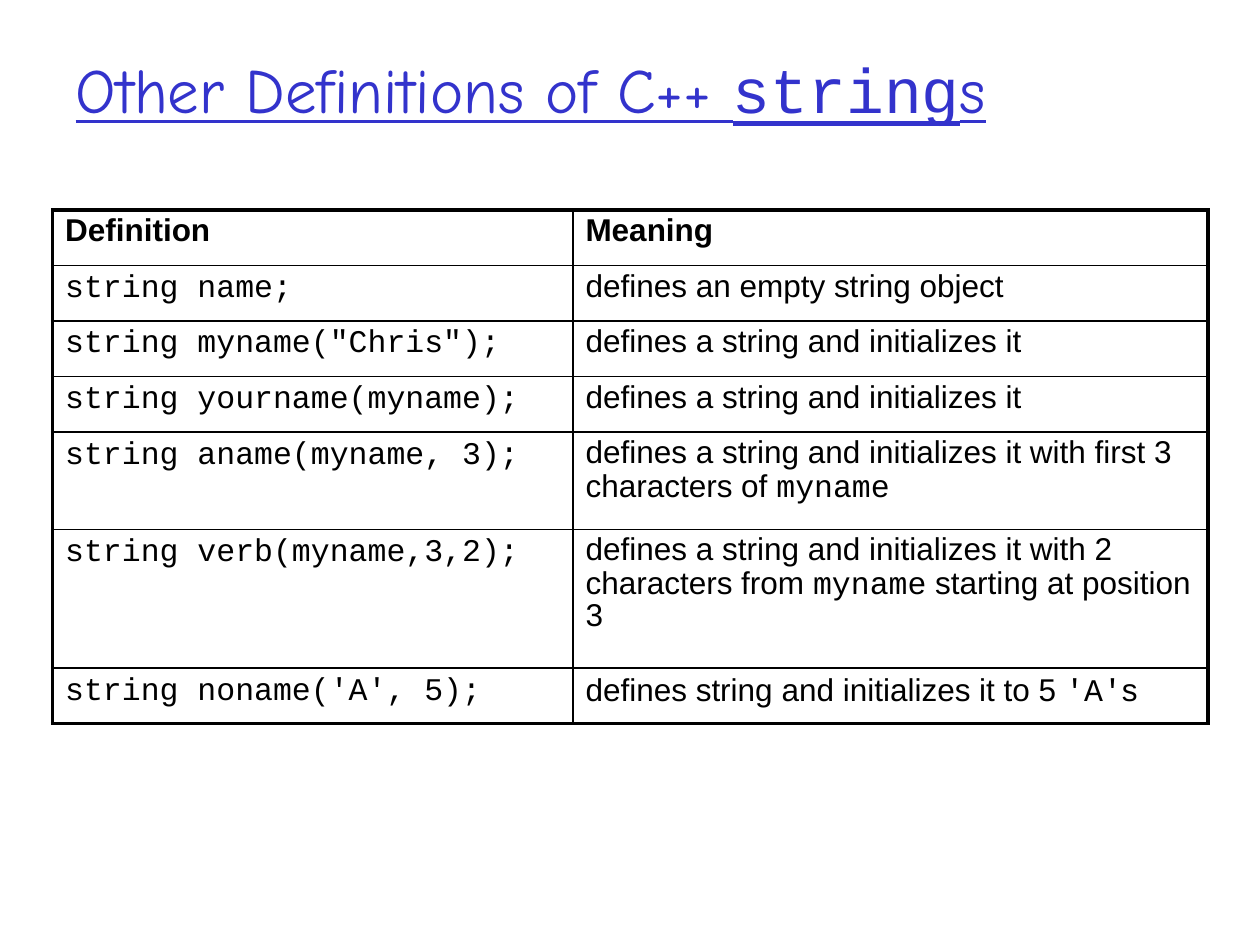
from lxml import etree
from pptx import Presentation
from pptx.dml.color import RGBColor
from pptx.enum.text import MSO_ANCHOR, PP_ALIGN
from pptx.oxml.ns import qn
from pptx.util import Cm, Pt

MIDDLE, LEFT = MSO_ANCHOR.MIDDLE, PP_ALIGN.LEFT


class Theme:
    title_color = RGBColor(0x33, 0x33, 0xCC)
    text_color = RGBColor(0, 0, 0)
    border_color = "000000"
    title_font, body_font, code_font = "Comic Neue", "Arial", "Courier New"
    title_size, body_size = Pt(36), Pt(18)
    thin, thick = Pt(1), Pt(2.25)


def add_runs(p, text, font):
    """Write text into a paragraph; parts between backticks are code."""
    for i, part in enumerate(text.split("`")):
        if part:
            r = p.add_run()
            r.text = part
            r.font.name = Theme.code_font if i % 2 else font


def set_border(cell, side, width):
    ln = etree.SubElement(cell._tc.get_or_add_tcPr(), qn(f"a:ln{side}"), w=str(width))
    fill = etree.SubElement(ln, qn("a:solidFill"))
    etree.SubElement(fill, qn("a:srgbClr"), val=Theme.border_color)


prs = Presentation()
prs.slide_width, prs.slide_height = Cm(25.4), Cm(19.05)
s = prs.slides.add_slide(prs.slide_layouts[5])

# Title
title = s.shapes.title
title.left, title.top, title.width, title.height = Cm(1.27), Cm(0.2), Cm(21.16), Cm(3.18)
tf = title.text_frame
tf.word_wrap = True
tf.vertical_anchor = MIDDLE
p = tf.paragraphs[0]
p.alignment = LEFT
p.font.size = Theme.title_size
p.font.color.rgb = Theme.title_color
add_runs(p, "Other Definitions of C++ `string`s", Theme.title_font)
for r in p.runs:
    r.font.underline = True

# Table of definitions
rows = [
    ("Definition", "Meaning"),
    ("`string name;`", "defines an empty string object"),
    ('`string myname("Chris");`', "defines a string and initializes it"),
    ("`string yourname(myname);`", "defines a string and initializes it"),
    ("`string aname(myname, 3);`",
     "defines a string and initializes it with first 3 characters of `myname`"),
    ("`string verb(myname,3,2);`",
     "defines a string and initializes it with 2 characters from `myname` starting at position 3"),
    ("`string noname('A', 5);`", "defines string and initializes it to 5 `'A'`s"),
]
col_widths = [Cm(10.49), Cm(12.8)]
row_heights = [Cm(h) for h in (1.12, 1.12, 1.12, 1.12, 1.96, 2.8, 1.12)]
table = s.shapes.add_table(len(rows), len(col_widths), Cm(1.06), Cm(4.23),
                           sum(col_widths), sum(row_heights)).table
table.first_row = table.horz_banding = False
for column, width in zip(table.columns, col_widths):
    column.width = width

for i, (texts, height) in enumerate(zip(rows, row_heights)):
    table.rows[i].height = height
    for j, text in enumerate(texts):
        cell = table.cell(i, j)
        p = cell.text_frame.paragraphs[0]
        p.line_spacing = 0.9
        p.font.size = Theme.body_size
        p.font.bold = i == 0
        p.font.color.rgb = Theme.text_color
        add_runs(p, text, Theme.body_font)

        # Thick lines around the table, thin lines inside
        outer = {"L": j == 0, "R": j == len(texts) - 1,
                 "T": i == 0, "B": i == len(rows) - 1}
        for side, is_outer in outer.items():
            set_border(cell, side, Theme.thick if is_outer else Theme.thin)
        cell.fill.background()

prs.save("out.pptx")
